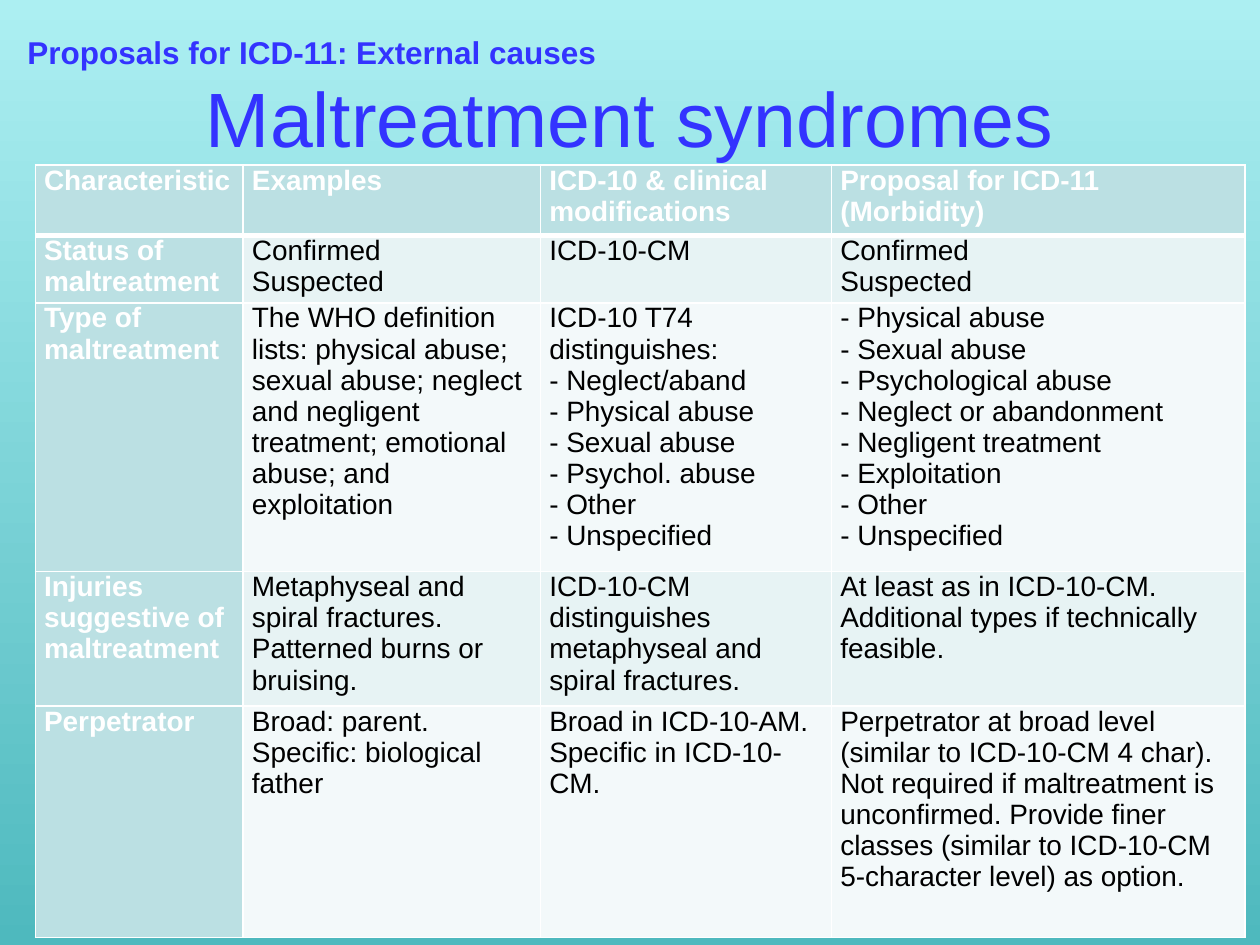
from lxml import etree
from pptx import Presentation, util as u
from pptx.dml.color import RGBColor
from pptx.enum import text
from pptx.oxml.ns import qn

COLOURS = {
    "sky": "ACEFF2", "sea": "4EB9BE", "heading": "3333FF",
    "header": "BBE0E3", "odd": "E7F3F4", "even": "F3F9FA",
    "white": "FFFFFF", "black": "000000",
}
COLUMN_WIDTHS = [1.65, 2.36, 2.31, 3.28]
ROW_HEIGHTS = [0.56, 0.5, 2, 1, 1.84]

# "\n" starts a paragraph, "\v" breaks a line
ROWS = [
    ["Characteristic", "Examples", "ICD-10 & clinical modifications",
     "Proposal for ICD-11 (Morbidity)"],
    ["Status of maltreatment", "Confirmed\vSuspected", "ICD-10-CM",
     "Confirmed\vSuspected"],
    ["Type of maltreatment",
     "The WHO definition lists: physical abuse; sexual abuse; neglect and "
     "negligent treatment; emotional abuse; and exploitation",
     "ICD-10 T74 distinguishes:\n- Neglect/aband\n- Physical abuse\n"
     "- Sexual abuse\n- Psychol. abuse\n- Other\n- Unspecified",
     "- Physical abuse\n- Sexual abuse\n- Psychological abuse\n"
     "- Neglect or abandonment\n- Negligent treatment\n- Exploitation\n"
     "- Other\n- Unspecified"],
    ["Injuries suggestive of maltreatment",
     "Metaphyseal and spiral fractures.\nPatterned burns or bruising.",
     "ICD-10-CM distinguishes metaphyseal and spiral fractures.",
     "At least as in ICD-10-CM. Additional types if technically feasible."],
    ["Perpetrator", "Broad: parent.\vSpecific: biological father",
     "Broad in ICD-10-AM. Specific in ICD-10-CM.",
     "Perpetrator at broad level (similar to ICD-10-CM 4 char). Not required "
     "if maltreatment is unconfirmed. Provide finer classes (similar to "
     "ICD-10-CM 5-character level) as option."],
]


def rgb(name):
    return RGBColor.from_string(COLOURS[name])


def style_text(frame, size, colour, bold=False, align=text.PP_ALIGN.LEFT):
    for paragraph in frame.paragraphs:
        paragraph.alignment = align
        font = paragraph.font
        font.name, font.size, font.bold = "Arial", u.Pt(size), bold
        font.color.rgb = rgb(colour)


def paint_background(page):
    fill = page.background.fill
    fill.gradient()
    fill.gradient_angle = 270
    for stop, name in zip(fill.gradient_stops, ("sky", "sea")):
        stop.color.rgb = rgb(name)


def add_heading(page, left, top, width, height, words, size, wrap=True, **style):
    box = page.shapes.add_textbox(*map(u.Inches, (left, top, width, height)))
    frame = box.text_frame
    frame.word_wrap = wrap
    frame.vertical_anchor = text.MSO_ANCHOR.MIDDLE
    frame.text = words
    style_text(frame, size, "heading", **style)


def set_borders(cell, widths):
    """Draw white borders; widths maps each side to points."""
    properties = cell._tc.get_or_add_tcPr()
    for place, side in enumerate("LRTB"):
        line = etree.Element(qn(f"a:ln{side}"), w=str(u.Pt(widths.get(side, 1))))
        solid = etree.SubElement(line, qn("a:solidFill"))
        etree.SubElement(solid, qn("a:srgbClr"), val=COLOURS["white"])
        properties.insert(place, line)


def fill_cell(cell, words, row, column):
    heading = row == 0 or column == 0
    cell.margin_left = cell.margin_right = u.Inches(0.07)
    cell.margin_top = cell.margin_bottom = 0
    cell.text_frame.text = words
    style_text(cell.text_frame, 16, "white" if heading else "black", bold=heading)
    cell.fill.solid()
    shade = "header" if heading else "odd" if row % 2 else "even"
    cell.fill.fore_color.rgb = rgb(shade)
    # The rule under the header row is thicker
    set_borders(cell, {0: {"B": 3}, 1: {"T": 3}}.get(row, {}))


def add_comparison(page, left, top):
    size = sum(COLUMN_WIDTHS), sum(ROW_HEIGHTS)
    table = page.shapes.add_table(len(ROWS), len(COLUMN_WIDTHS),
                                  *map(u.Inches, (left, top, *size))).table
    for column, width in zip(table.columns, COLUMN_WIDTHS):
        column.width = u.Inches(width)
    for row, height in zip(table.rows, ROW_HEIGHTS):
        row.height = u.Inches(height)
    for i, entries in enumerate(ROWS):
        for j, words in enumerate(entries):
            fill_cell(table.cell(i, j), words, i, j)


def main():
    deck = Presentation()
    deck.slide_width, deck.slide_height = u.Inches(10), u.Inches(7.5)
    page = deck.slides.add_slide(deck.slide_layouts[6])
    paint_background(page)
    # Title, table, then the running section label
    add_heading(page, 0.5, 0.3, 9, 1.25, "Maltreatment syndromes", 44,
                align=text.PP_ALIGN.CENTER)
    add_comparison(page, 0.28, 1.31)
    add_heading(page, 0.12, 0.21, 4.76, 0.4,
                "Proposals for ICD-11: External causes", 18, wrap=False, bold=True)
    deck.save("out.pptx")


if __name__ == "__main__":
    main()
